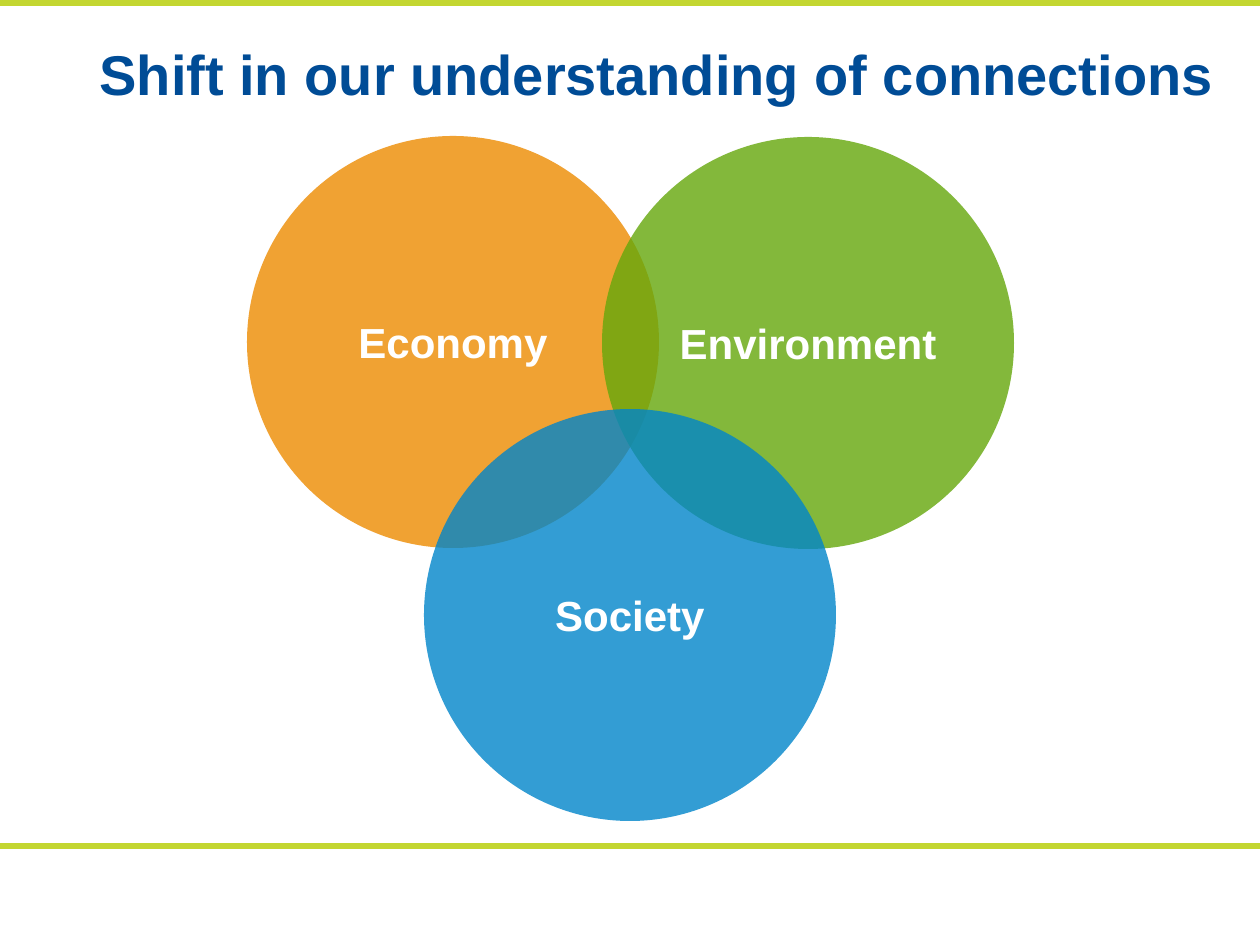
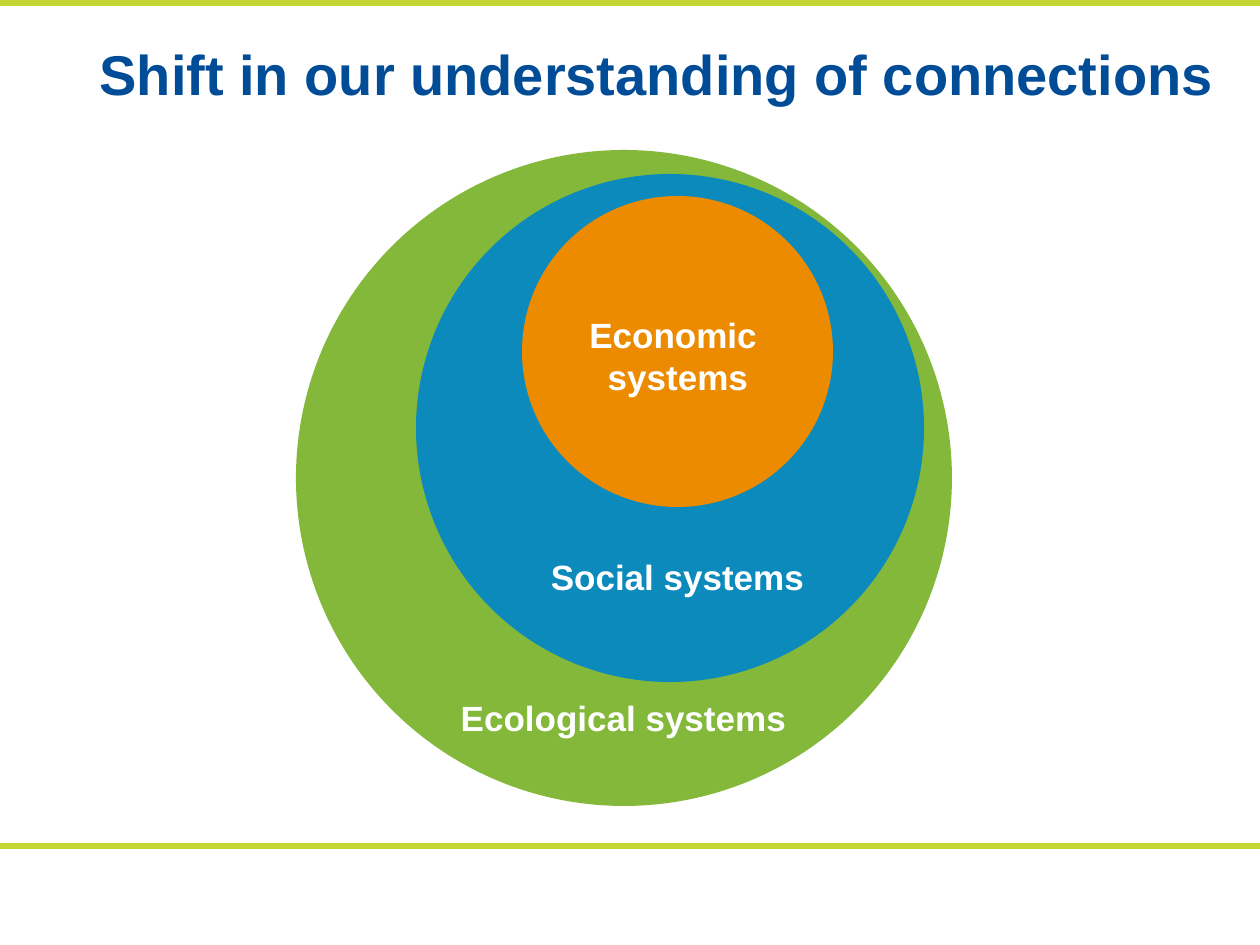
from lxml import etree
from pptx import Presentation
from pptx import util as u
from pptx.dml.color import RGBColor
from pptx.enum import shapes, text
from pptx.oxml.ns import qn

PX = u.Inches(1) / 126
ORANGE, GREEN, BLUE = "ED8B00", "64A70B", "0085CA"
WHITE, LIME, NAVY = "FFFFFF", "C3D631", "004C96"
HEADING = "Shift in our understanding of connections"
TITLE_BOX = (87, 4, 1143, 146)
BANDS = [(0, 0, 1260, 6), (0, 843, 1260, 6)]

# Circles: left, top, diameter, colour, opacity in percent, text
# Labels: left, top, width, height, text
PAGES = [
    {
        "circles": [
            (247, 136, 412, ORANGE, 80, "Economy"),
            (602, 137, 412, GREEN, 80, "Environment"),
            (424, 409, 412, BLUE, 80, "Society"),
        ],
        "labels": [],
    },
    {
        "circles": [
            (296, 150, 656, GREEN, 80, ""),
            (416, 174, 508, BLUE, 90, ""),
            (522, 196, 311, ORANGE, 100, ""),
        ],
        "labels": [
            (447, 690, 353, 55, "Ecological systems"),
            (537, 549, 281, 55, "Social systems"),
            (576, 307, 204, 97, "Economic \vsystems"),
        ],
    },
]


def add_filled(page, kind, box, colour, opacity=100):
    """Add a borderless shape; box is left, top, width, height in px."""
    shape = page.shapes.add_shape(kind, *(round(v * PX) for v in box))
    shape.shadow.inherit = False
    shape.line.fill.background()
    shape.fill.solid()
    shape.fill.fore_color.rgb = RGBColor.from_string(colour)
    if opacity < 100:
        tint = shape.fill._xPr.find(".//" + qn("a:srgbClr"))
        etree.SubElement(tint, qn("a:alpha"), val=str(opacity * 1000))
    return shape


def write(frame, words, size, colour=WHITE, align=text.PP_ALIGN.CENTER):
    """Fill a text frame with one bold Arial paragraph."""
    frame.text = words
    para = frame.paragraphs[0]
    para.alignment = align
    for span in para.runs:
        look = {"name": "Arial", "size": u.Pt(size), "bold": True}
        for key, value in look.items():
            setattr(span.font, key, value)
        span.font.color.rgb = RGBColor.from_string(colour)
    return para


deck = Presentation()
deck.slide_width, deck.slide_height = u.Inches(10), u.Inches(7.5)

for content in PAGES:
    page = deck.slides.add_slide(deck.slide_layouts[5])
    for band in BANDS:
        add_filled(page, shapes.MSO_SHAPE.RECTANGLE, band, LIME)

    title = page.shapes.title
    for side, value in zip(("left", "top", "width", "height"), TITLE_BOX):
        setattr(title, side, round(value * PX))
    title.text_frame.auto_size = text.MSO_AUTO_SIZE.NONE
    title.text_frame.vertical_anchor = text.MSO_ANCHOR.MIDDLE
    para = write(title.text_frame, HEADING, 32, NAVY, text.PP_ALIGN.LEFT)
    para.line_spacing = 0.9

    for left, top, size, colour, opacity, words in content["circles"]:
        circle = add_filled(page, shapes.MSO_SHAPE.OVAL,
                            (left, top, size, size), colour, opacity)
        if words:
            circle.text_frame.vertical_anchor = text.MSO_ANCHOR.MIDDLE
            write(circle.text_frame, words, 24)

    for *place, words in content["labels"]:
        label = page.shapes.add_textbox(*(round(v * PX) for v in place))
        label.text_frame.word_wrap = False
        label.text_frame.auto_size = text.MSO_AUTO_SIZE.SHAPE_TO_FIT_TEXT
        write(label.text_frame, words, 20)

deck.save("out.pptx")
